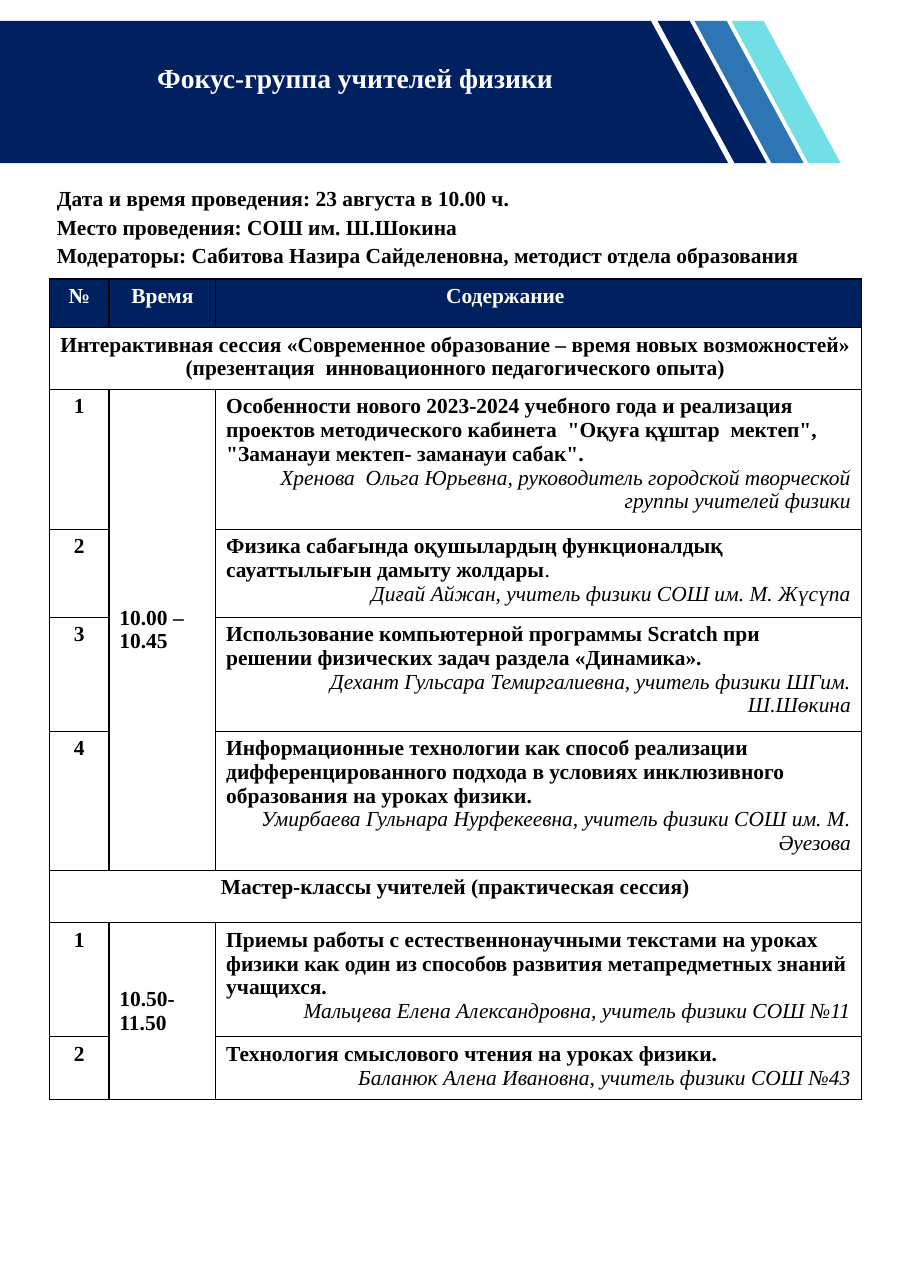
from dataclasses import dataclass

from lxml import etree
from pptx import Presentation
from pptx.dml.color import RGBColor
from pptx.enum.shapes import MSO_SHAPE
from pptx.enum.text import MSO_ANCHOR, MSO_AUTO_SIZE, PP_ALIGN
from pptx.oxml.ns import qn
from pptx.util import Pt

LEFT, CENTER, RIGHT = PP_ALIGN.LEFT, PP_ALIGN.CENTER, PP_ALIGN.RIGHT
TOP, MIDDLE = MSO_ANCHOR.TOP, MSO_ANCHOR.MIDDLE
NO_AUTOSIZE = MSO_AUTO_SIZE.NONE
PARALLELOGRAM = MSO_SHAPE.PARALLELOGRAM
FONT = "Times New Roman"
COLORS = {"navy": "002060", "blue": "2E75B6", "aqua": "71DFE5",
          "white": "FFFFFF", "black": "000000"}
COLUMNS = (38.9, 69.8, 421.9)
HEADER_HEIGHT = 31.7
BANNER_TOP, BANNER_HEIGHT = 13.7, 92.9
STRIPE_LEFT, STRIPE_STEP, STRIPE_WIDTH = 429.8, 24.15, 71.3


@dataclass
class Talk:
    height: float
    topic: str
    speaker: str
    ending: str = ""


@dataclass
class Session:
    height: float
    title: str
    time: str
    talks: list[Talk]


DETAILS = [
    "Дата и время проведения: 23 августа в 10.00 ч.",
    "Место проведения: СОШ им. Ш.Шокина",
    "Модераторы: Сабитова Назира Сайделеновна, методист отдела образования",
]
SESSIONS = [
    Session(40.5, "Интерактивная сессия «Современное образование – время новых "
            "возможностей» (презентация  инновационного педагогического опыта)",
            "10.00 – 10.45", [
                Talk(91.5, "Особенности нового 2023-2024 учебного года и реализация "
                     "проектов методического кабинета  \"Оқуға құштар  мектеп\",  "
                     "\"Заманауи мектеп- заманауи сабак\".",
                     "Хренова  Ольга Юрьевна, руководитель городской творческой "
                     "группы учителей физики"),
                Talk(57.5, "Физика сабағында оқушылардың функционалдық "
                     "сауаттылығын дамыту жолдары",
                     "Диғай Айжан, учитель физики СОШ им. М. Жүсүпа", "."),
                Talk(74.5, "Использование компьютерной программы Scratch при "
                     "решении физических задач раздела «Динамика».",
                     "Дехант Гульсара Темиргалиевна, учитель физики ШГим. Ш.Шөкина"),
                Talk(90.8, "Информационные технологии как способ реализации "
                     "дифференцированного подхода в условиях инклюзивного "
                     "образования на уроках физики.",
                     "Умирбаева Гульнара Нурфекеевна, учитель физики СОШ им. "
                     "М. Әуезова"),
            ]),
    Session(34.3, "Мастер-классы учителей (практическая сессия)",
            "10.50-11.50", [
                Talk(74.5, "Приемы работы с естественнонаучными текстами на уроках "
                     "физики как один из способов развития метапредметных знаний "
                     "учащихся.",
                     "Мальцева Елена Александровна, учитель физики СОШ №11"),
                Talk(40.8, "Технология смыслового чтения на уроках физики.",
                     "Баланюк Алена Ивановна, учитель физики СОШ №43"),
            ]),
]


def rgb(name: str) -> RGBColor:
    """Return a palette colour."""
    return RGBColor.from_string(COLORS[name])


def style(p, color="black", size=14, bold=True, italic=False, align=LEFT) -> None:
    """Format a paragraph and its runs."""
    p.alignment = align
    for r in p.runs:
        f = r.font
        f.name, f.size, f.bold, f.italic = FONT, Pt(size), bold, italic
        f.color.rgb = rgb(color)


def paint(sp, color: str) -> None:
    """Give a shape a plain fill without outline or shadow."""
    sp.fill.solid()
    sp.fill.fore_color.rgb = rgb(color)
    sp.line.fill.background()
    sp.shadow.inherit = False


def add_banner(slide) -> None:
    """Draw the banner, its slanted stripes and the title."""
    bottom = BANNER_TOP + BANNER_HEIGHT
    builder = slide.shapes.build_freeform(0, Pt(BANNER_TOP))
    builder.add_line_segments([(Pt(425.5), Pt(BANNER_TOP)),
                               (Pt(476), Pt(bottom)), (0, Pt(bottom))])
    paint(builder.convert_to_shape(), "navy")
    for i, color in enumerate(("navy", "blue", "aqua")):
        sp = slide.shapes.add_shape(
            PARALLELOGRAM, Pt(STRIPE_LEFT + i * STRIPE_STEP), Pt(BANNER_TOP),
            Pt(STRIPE_WIDTH), Pt(BANNER_HEIGHT))
        sp.adjustments[0] = 0.705
        sp.rotation = 180
        sp._element.spPr.find(qn("a:xfrm")).set("flipH", "1")
        paint(sp, color)
    title = slide.shapes.title
    slide.shapes._spTree.append(title._element)
    title.left, title.top, title.width, title.height = map(Pt, (11.4, 34.6, 441.4, 28.8))
    tf = title.text_frame
    tf.text = "Фокус-группа учителей физики"
    tf.word_wrap, tf.auto_size, tf.vertical_anchor = True, NO_AUTOSIZE, TOP
    tf.paragraphs[0].line_spacing = 1.08
    style(tf.paragraphs[0], "white", 18, align=CENTER)


def add_details(slide) -> None:
    """Write the date, place and moderators."""
    tf = slide.shapes.add_textbox(Pt(30.2), Pt(115.9), Pt(532), Pt(58.3)).text_frame
    tf.word_wrap = True
    tf.text = "\n".join(DETAILS)
    for p in tf.paragraphs:
        p.line_spacing = 1.1
        style(p)


def format_cell(cell, fill: str = "") -> None:
    """Set the borders, fill and margins of a cell."""
    tc_pr = cell._tc.get_or_add_tcPr()
    for side in ("lnL", "lnR", "lnT", "lnB"):
        ln = etree.SubElement(tc_pr, qn(f"a:{side}"), w=str(Pt(1)))
        solid = etree.SubElement(ln, qn("a:solidFill"))
        etree.SubElement(solid, qn("a:srgbClr"), val=COLORS["black"])
    if fill:
        cell.fill.solid()
        cell.fill.fore_color.rgb = rgb(fill)
    else:
        cell.fill.background()
    cell.margin_left = cell.margin_right = Pt(6.8)


def write(cell, text: str, align=CENTER, color="black") -> None:
    """Put one bold paragraph into a cell."""
    cell.text = text
    style(cell.text_frame.paragraphs[0], color, align=align)


def write_talk(cell, talk: Talk) -> None:
    """Write the topic of a talk with its speaker below."""
    cell.text = f"{talk.topic}\n{talk.speaker}"
    topic, speaker = cell.text_frame.paragraphs
    style(topic)
    style(speaker, bold=False, italic=True, align=RIGHT)
    if talk.ending:
        r = topic.add_run()
        r.text = talk.ending
        r.font.name, r.font.size, r.font.bold = FONT, Pt(14), False
        r.font.color.rgb = rgb("black")


def add_programme(slide) -> None:
    """Build the programme table."""
    heights = [HEADER_HEIGHT]
    for s in SESSIONS:
        heights += [s.height, *(t.height for t in s.talks)]
    table = slide.shapes.add_table(len(heights), len(COLUMNS), Pt(32.4), Pt(182.3),
                                   Pt(sum(COLUMNS)), Pt(sum(heights))).table
    table.first_row = table.horz_banding = False
    for column, width in zip(table.columns, COLUMNS):
        column.width = Pt(width)
    for i, height in enumerate(heights):
        table.rows[i].height = Pt(height)
        for cell in table.rows[i].cells:
            format_cell(cell, "" if i else "navy")
    for i, (text, align) in enumerate((("№", CENTER), ("Время", CENTER),
                                       ("Содержание", LEFT))):
        write(table.cell(0, i), text, align, "white")
    table.cell(0, 2).margin_left = Pt(150.5)
    row = 1
    for s in SESSIONS:
        table.cell(row, 0).merge(table.cell(row, 2))
        write(table.cell(row, 0), s.title)
        time = table.cell(row + 1, 1)
        time.merge(table.cell(row + len(s.talks), 1))
        write(time, s.time, LEFT)
        time.vertical_anchor = MIDDLE
        for number, talk in enumerate(s.talks, 1):
            write(table.cell(row + number, 0), str(number))
            write_talk(table.cell(row + number, 2), talk)
        row += len(s.talks) + 1


def main() -> None:
    """Build and save the slide."""
    prs = Presentation()
    prs.slide_width, prs.slide_height = Pt(595.44), Pt(841.68)
    slide = prs.slides.add_slide(prs.slide_layouts[5])
    add_banner(slide)
    add_programme(slide)
    add_details(slide)
    prs.save("out.pptx")


if __name__ == "__main__":
    main()
